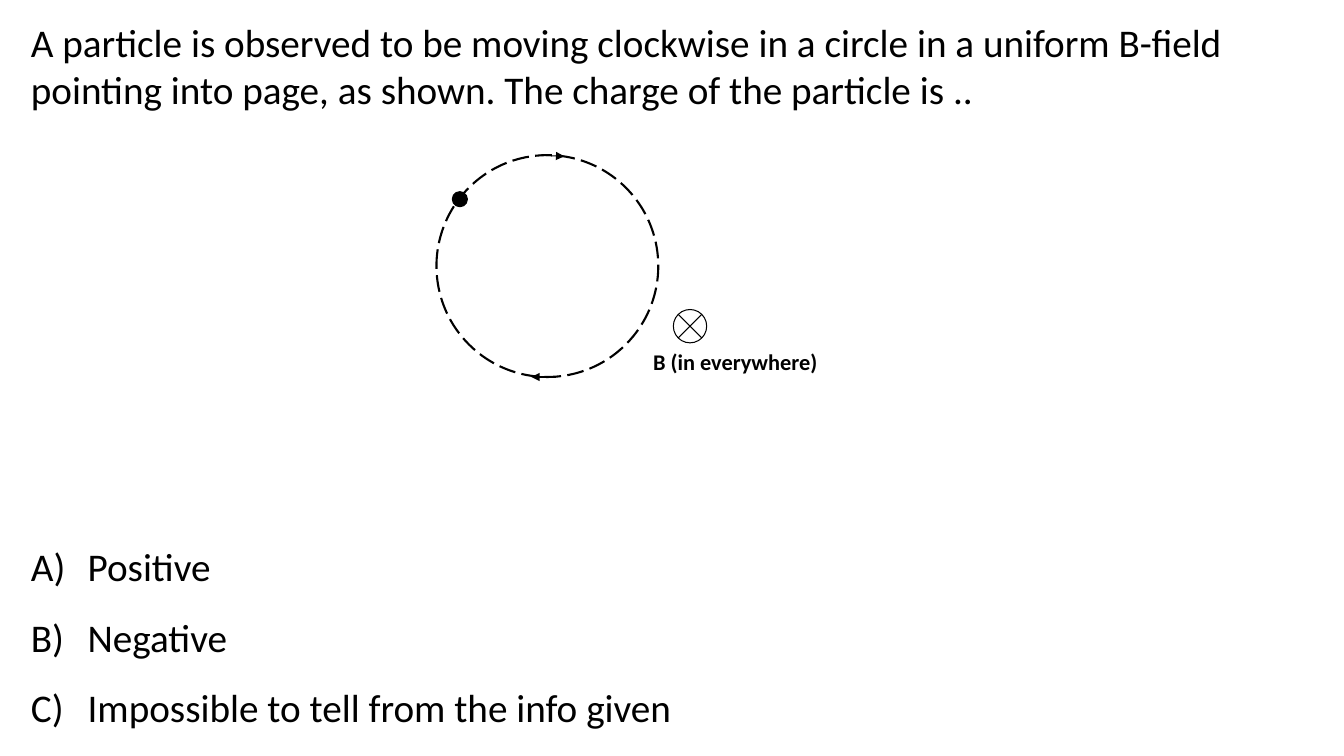
from dataclasses import dataclass

from lxml.etree import SubElement
from pptx import Presentation
from pptx.dml.color import RGBColor
from pptx.enum.dml import MSO_LINE
from pptx.enum.shapes import MSO_CONNECTOR, MSO_SHAPE
from pptx.enum.text import MSO_AUTO_SIZE, PP_ALIGN
from pptx.oxml.ns import qn
from pptx.slide import Slide
from pptx.text.text import TextFrame
from pptx.util import Cm, Pt


@dataclass(frozen=True)
class Theme:
    ink: RGBColor = RGBColor(0, 0, 0)
    paper: RGBColor = RGBColor(255, 255, 255)
    font: str = "Calibri"
    body_size: int = 28
    label_size: int = 16
    thin: float = 0.75
    orbit_width: float = 1.5


THEME = Theme()


@dataclass(frozen=True)
class Disc:
    left: float
    top: float
    diameter: float
    fill: RGBColor
    preset: MSO_SHAPE = MSO_SHAPE.OVAL
    line_width: float = THEME.thin
    dash: MSO_LINE | None = None


@dataclass(frozen=True)
class Arrow:
    start: tuple[float, float]
    end: tuple[float, float]


@dataclass(frozen=True)
class TextBlock:
    left: float
    top: float
    width: float
    height: float
    lines: tuple[str, ...]
    size: int = THEME.body_size
    bold: bool = False
    wrap: bool = True
    auto_size: MSO_AUTO_SIZE = MSO_AUTO_SIZE.SHAPE_TO_FIT_TEXT
    space_after: float = 0
    line_spacing: float = 1.0
    lettered: bool = False


ORBIT = Disc(11, 3.91, 5.59, THEME.paper,
             line_width=THEME.orbit_width, dash=MSO_LINE.LONG_DASH)
FIELD_SYMBOL = Disc(16.97, 7.8, 0.84, THEME.paper,
                    MSO_SHAPE.FLOWCHART_SUMMING_JUNCTION)
PARTICLE = Disc(11.4, 4.83, 0.38, THEME.ink)

ORBIT_BOTTOM = ORBIT.top + ORBIT.diameter
ARROWS = (
    Arrow((13.59, ORBIT.top), (14.22, ORBIT.top + 0.03)),
    Arrow((14.02, ORBIT_BOTTOM), (13.39, ORBIT_BOTTOM)),
)

FIELD_LABEL = TextBlock(
    16.21, 8.64, 7.92, 2.41, ("B (in everywhere)",), THEME.label_size,
    bold=True, auto_size=MSO_AUTO_SIZE.NONE, space_after=8)
QUESTION = TextBlock(
    0.53, 0.33, 32.66, 2.64,
    ("A particle is observed to be moving clockwise in a circle in a uniform "
     "B-field pointing into page, as shown. The charge of the particle is ..",))
ANSWERS = TextBlock(
    0.53, 12.95, 16.81, 5.64,
    ("Positive", "Negative", "Impossible to tell from the info given"),
    wrap=False, line_spacing=1.5, lettered=True)


def draw_disc(slide: Slide, disc: Disc) -> None:
    circle = slide.shapes.add_shape(
        disc.preset, Cm(disc.left), Cm(disc.top),
        Cm(disc.diameter), Cm(disc.diameter))
    circle.shadow.inherit = False
    circle.fill.solid()
    circle.fill.fore_color.rgb = disc.fill
    circle.line.color.rgb = THEME.ink
    circle.line.width = Pt(disc.line_width)
    if disc.dash is not None:
        circle.line.dash_style = disc.dash


def draw_arrow(slide: Slide, arrow: Arrow) -> None:
    direction = slide.shapes.add_connector(
        MSO_CONNECTOR.STRAIGHT, *map(Cm, arrow.start), *map(Cm, arrow.end))
    direction.line.color.rgb = THEME.ink
    direction.line.width = Pt(THEME.thin)
    SubElement(direction.line._get_or_add_ln(), qn("a:tailEnd"), type="triangle")
    SubElement(direction._element.spPr, qn("a:effectLst"))


def write_lines(frame: TextFrame, block: TextBlock) -> None:
    paragraph_format = {
        "alignment": PP_ALIGN.LEFT,
        "line_spacing": block.line_spacing,
        "space_after": Pt(block.space_after),
    }
    font_format = {
        "name": THEME.font,
        "size": Pt(block.size),
        "bold": block.bold,
    }
    for index, line in enumerate(block.lines):
        paragraph = frame.add_paragraph() if index else frame.paragraphs[0]
        for attribute, value in paragraph_format.items():
            setattr(paragraph, attribute, value)
        if block.lettered:
            properties = paragraph._p.get_or_add_pPr()
            hanging = Cm(1.43)
            properties.set("marL", str(hanging))
            properties.set("indent", str(-hanging))
            SubElement(properties, qn("a:buFont"), typeface="+mj-lt")
            SubElement(properties, qn("a:buAutoNum"), type="alphaUcParenR")
        run = paragraph.add_run()
        run.text = line
        for attribute, value in font_format.items():
            setattr(run.font, attribute, value)
        run.font.color.rgb = THEME.ink


def draw_text(slide: Slide, block: TextBlock) -> None:
    frame = slide.shapes.add_textbox(
        Cm(block.left), Cm(block.top), Cm(block.width), Cm(block.height)).text_frame
    frame.word_wrap = block.wrap
    frame.auto_size = block.auto_size
    write_lines(frame, block)


def main() -> None:
    presentation = Presentation()
    presentation.slide_width = Cm(33.87)
    presentation.slide_height = Cm(19.05)
    slide = presentation.slides.add_slide(presentation.slide_layouts[6])

    for disc in (ORBIT, FIELD_SYMBOL):
        draw_disc(slide, disc)
    draw_text(slide, FIELD_LABEL)
    draw_disc(slide, PARTICLE)
    for arrow in ARROWS:
        draw_arrow(slide, arrow)
    for block in (QUESTION, ANSWERS):
        draw_text(slide, block)

    presentation.save("out.pptx")


if __name__ == "__main__":
    main()
